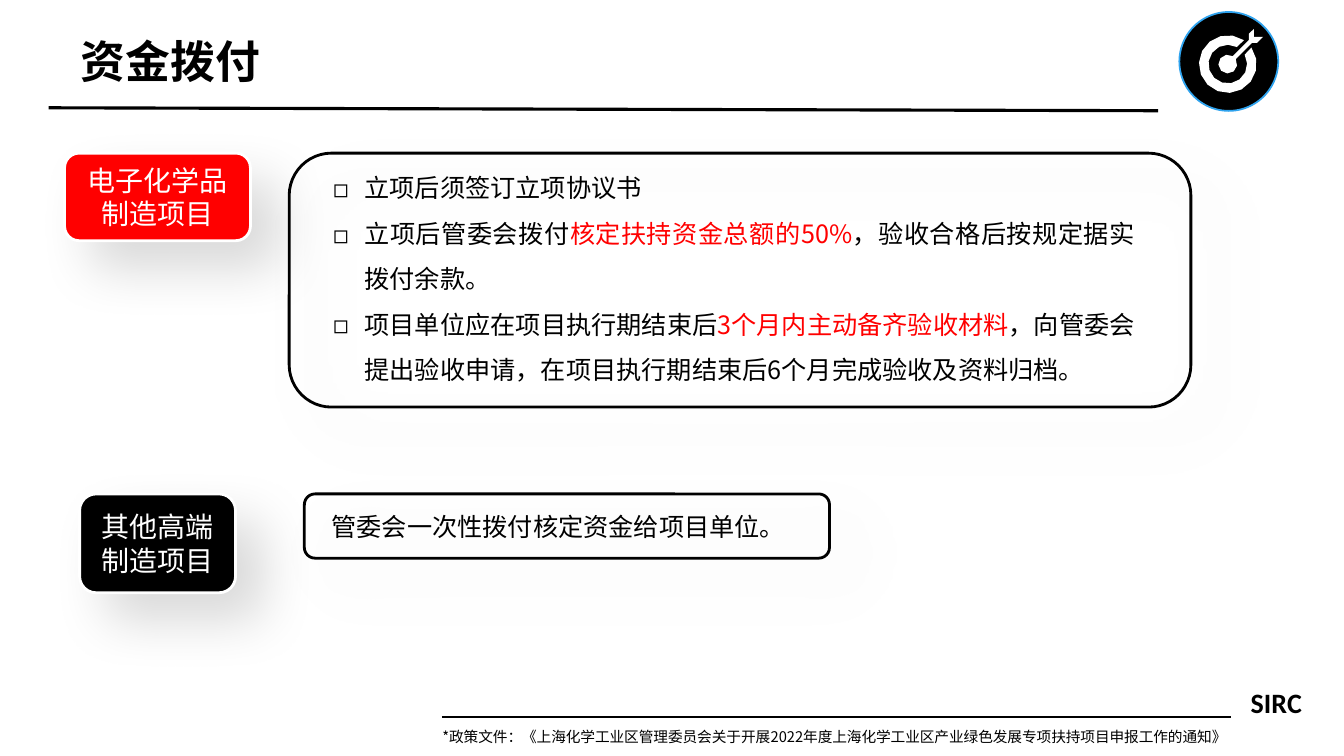
"""Build the slide on how project funding is paid out."""
from dataclasses import dataclass
from math import cos, radians, sin

from lxml.etree import SubElement
from pptx import Presentation
from pptx.dml.color import RGBColor
from pptx.enum.shapes import MSO_CONNECTOR, MSO_SHAPE
from pptx.enum.text import MSO_ANCHOR, MSO_AUTO_SIZE, PP_ALIGN
from pptx.oxml.ns import qn
from pptx.shapes.autoshape import Shape
from pptx.slide import Slide
from pptx.text.text import TextFrame
from pptx.util import Pt


@dataclass(frozen=True)
class Theme:
    black: str = "000000"
    white: str = "FFFFFF"
    red: str = "FF0000"
    badge_rim: str = "2FA3EE"
    font: str = "Noto Sans CJK SC"
    mark_font: str = "Calibri"
    title: float = 32
    label: float = 20
    body: float = 18
    note: float = 10.5


THEME = Theme()


@dataclass(frozen=True)
class Box:
    left: float
    top: float
    width: float
    height: float

    def lengths(self) -> tuple[Pt, Pt, Pt, Pt]:
        return Pt(self.left), Pt(self.top), Pt(self.width), Pt(self.height)


@dataclass(frozen=True)
class Style:
    size: float
    font: str = THEME.font
    bold: bool = False
    align: PP_ALIGN = PP_ALIGN.LEFT
    leading: float = 1.2
    bullet: str = ""


@dataclass(frozen=True)
class Span:
    text: str
    color: str = THEME.black


@dataclass(frozen=True)
class Scheme:
    label: str
    fill: str
    label_box: Box
    frame_box: Box
    text_box: Box
    bullet: str
    paragraphs: tuple[tuple[Span, ...], ...]


@dataclass(frozen=True)
class Rule:
    start: tuple[float, float]
    end: tuple[float, float]
    weight: float


RULES = (
    Rule((34.7, 77), (827.3, 79.1), 2.25),
    Rule((315.6, 512.2), (879.1, 512.2), 1),
)

SCHEMES = (
    Scheme(
        "电子化学品制造项目", THEME.red,
        Box(46.1, 109.4, 132.8, 62.6), Box(206.6, 109.4, 644.1, 181.4),
        Box(230.8, 109.1, 586.8, 180), "◻",
        (
            (Span("立项后须签订立项协议书"),),
            (Span("立项后管委会拨付"), Span("核定扶持资金总额的50%", THEME.red),
             Span("，验收合格后按规定据实拨付余款。")),
            (Span("项目单位应在项目执行期结束后"), Span("3个月内主动备齐验收材料", THEME.red),
             Span("，向管委会提出验收申请，在项目执行期结束后6个月完成验收及资料归档。")),
        ),
    ),
    Scheme(
        "其他高端制造项目", THEME.black,
        Box(56.9, 352.8, 111.4, 70.6), Box(217.4, 352.8, 375.1, 45.9),
        Box(229.7, 350.9, 350.6, 40), "",
        ((Span("管委会一次性拨付核定资金给项目单位。"),),),
    ),
)

NOTE = "*政策文件：《上海化学工业区管理委员会关于开展2022年度上海化学工业区产业绿色发展专项扶持项目申报工作的通知》"
TARGET_CENTER = (877, 45.8)
DART = ((15.1, -17.3), (15.1, -21.6), (18.7, -25.2), (18.7, -19.4),
        (25.2, -19.4), (20.9, -15.1), (17.3, -15.1))


def write(frame: TextFrame, paragraphs: tuple[tuple[Span, ...], ...], style: Style,
          anchor: MSO_ANCHOR = MSO_ANCHOR.TOP) -> None:
    frame.word_wrap = True
    frame.auto_size = MSO_AUTO_SIZE.NONE
    frame.vertical_anchor = anchor
    for index, spans in enumerate(paragraphs):
        para = frame.add_paragraph() if index else frame.paragraphs[0]
        para.alignment = style.align
        para.line_spacing = Pt(style.size * style.leading)
        if style.bullet:
            properties = para._p.get_or_add_pPr()
            properties.set("marL", str(Pt(22.5)))
            properties.set("indent", str(Pt(-22.5)))
            SubElement(properties, qn("a:buFont"), typeface=style.font)
            SubElement(properties, qn("a:buChar"), char=style.bullet)
        for span in spans:
            run = para.add_run()
            run.text = span.text
            run.font.size = Pt(style.size)
            run.font.bold = style.bold
            run.font.color.rgb = RGBColor.from_string(span.color)
            run.font.name = style.font
            SubElement(run._r.get_or_add_rPr(), qn("a:ea"), typeface=style.font)


def add_text(page: Slide, box: Box, paragraphs: tuple[tuple[Span, ...], ...], style: Style) -> None:
    write(page.shapes.add_textbox(*box.lengths()).text_frame, paragraphs, style)


def paint(shape: Shape, fill: str = "", line: str = "", weight: float = 0) -> None:
    shape.shadow.inherit = False
    if fill:
        shape.fill.solid()
        shape.fill.fore_color.rgb = RGBColor.from_string(fill)
    else:
        shape.fill.background()
    if line:
        shape.line.color.rgb = RGBColor.from_string(line)
        shape.line.width = Pt(weight)
    else:
        shape.line.fill.background()


def add_card(page: Slide, box: Box, fill: str, line: str) -> Shape:
    card = page.shapes.add_shape(MSO_SHAPE.ROUNDED_RECTANGLE, *box.lengths())
    paint(card, fill, line, 2)
    effects = card._element.spPr.find(qn("a:effectLst"))
    shadow = SubElement(effects, qn("a:outerShdw"), blurRad=str(Pt(38)), dist=str(Pt(27)),
                        dir=str(45 * 60000), algn="tl", rotWithShape="0")
    color = SubElement(shadow, qn("a:srgbClr"), val=THEME.black)
    SubElement(color, qn("a:alpha"), val="15000")
    return card


def add_scheme(page: Slide, scheme: Scheme) -> None:
    label = add_card(page, scheme.label_box, scheme.fill, THEME.white)
    write(label.text_frame, ((Span(scheme.label, THEME.white),),),
          Style(THEME.label, align=PP_ALIGN.CENTER), MSO_ANCHOR.MIDDLE)
    add_text(page, scheme.text_box, scheme.paragraphs,
             Style(THEME.body, align=PP_ALIGN.JUSTIFY, leading=1.8, bullet=scheme.bullet))
    add_card(page, scheme.frame_box, "", THEME.black)


def add_rule(page: Slide, rule: Rule) -> None:
    line = page.shapes.add_connector(MSO_CONNECTOR.STRAIGHT, *map(Pt, rule.start + rule.end))
    line.line.color.rgb = RGBColor.from_string(THEME.black)
    line.line.width = Pt(rule.weight)
    SubElement(line._element.spPr, qn("a:effectLst"))


def arc(radius: float, start: int, end: int, steps: int) -> list[tuple[float, float]]:
    angles = [radians(start + (end - start) * step / steps) for step in range(steps + 1)]
    return [(radius * cos(angle), radius * sin(angle)) for angle in angles]


def add_target(page: Slide) -> None:
    badge = page.shapes.add_shape(MSO_SHAPE.OVAL, *Box(842.4, 8.6, 70.6, 70.6).lengths())
    paint(badge, THEME.black, THEME.badge_rim, 1.25)
    center_x, center_y = TARGET_CENTER
    ring = arc(20.6, -35, 304, 14) + arc(13.8, 298, -29, 12)
    dart = arc(6.7, -32, 302, 8) + list(DART)
    ring, dart = ([(Pt(center_x + x), Pt(center_y + y)) for x, y in outline]
                  for outline in (ring, dart))
    builder = page.shapes.build_freeform(*ring[0])
    builder.add_line_segments(ring[1:], close=True)
    builder.move_to(*dart[0])
    builder.add_line_segments(dart[1:], close=True)
    paint(builder.convert_to_shape(), THEME.white)


def main() -> None:
    deck = Presentation()
    deck.slide_width, deck.slide_height = Pt(960), Pt(540)
    page = deck.slides.add_slide(deck.slide_layouts[5])
    title = page.shapes.title
    title.left, title.top, title.width, title.height = Box(34.8, 20, 158.4, 46.1).lengths()
    write(title.text_frame, ((Span("资金拨付"),),),
          Style(THEME.title, bold=True, align=PP_ALIGN.RIGHT), MSO_ANCHOR.MIDDLE)
    add_text(page, Box(886.3, 486, 73.4, 31.7), ((Span("SIRC"),),),
             Style(THEME.label, font=THEME.mark_font, bold=True))
    add_text(page, Box(308.9, 516.2, 590, 23), ((Span(NOTE),),), Style(THEME.note))
    for rule in RULES:
        add_rule(page, rule)
    add_target(page)
    for scheme in SCHEMES:
        add_scheme(page, scheme)
    deck.save("out.pptx")


if __name__ == "__main__":
    main()
